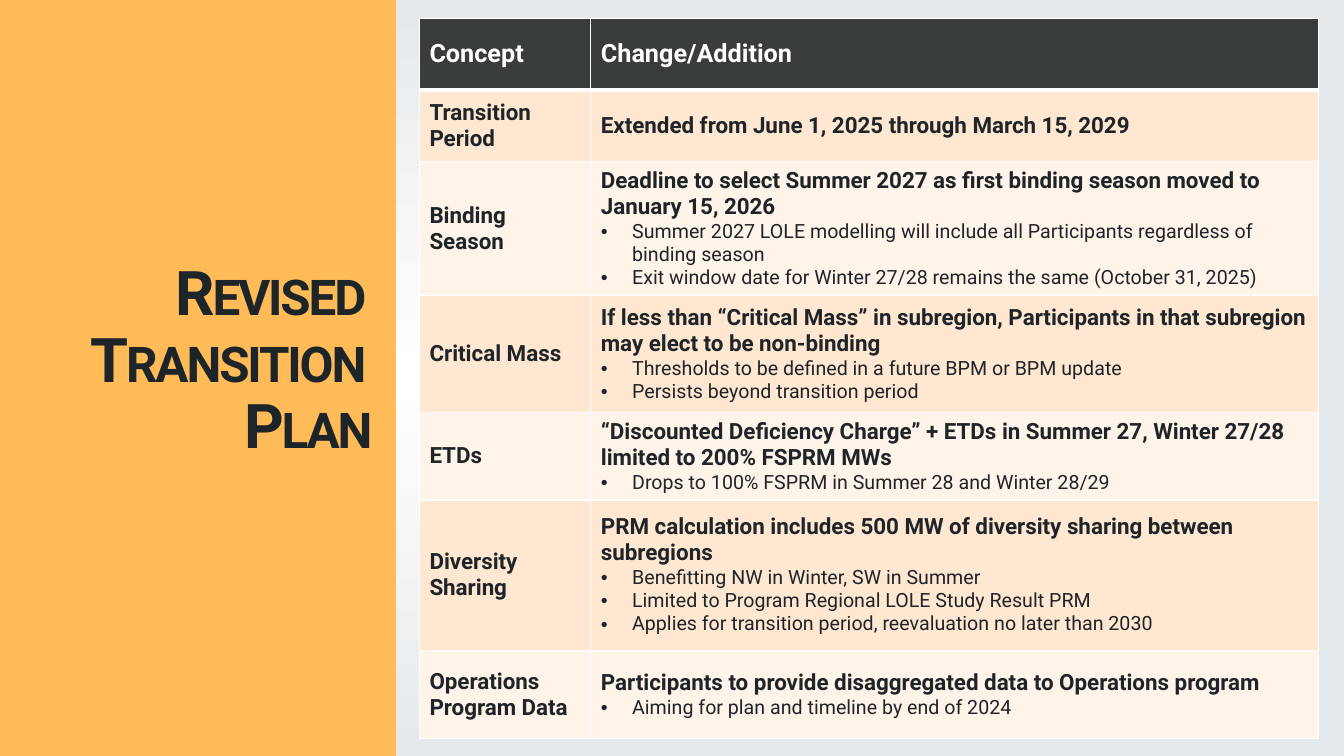
from lxml import etree
from pptx import Presentation
from pptx.dml.color import RGBColor
from pptx.enum.shapes import MSO_SHAPE
from pptx.enum.text import MSO_ANCHOR, PP_ALIGN
from pptx.oxml.ns import qn
from pptx.util import Inches, Pt

RECT = MSO_SHAPE.RECTANGLE
MIDDLE = MSO_ANCHOR.MIDDLE
RIGHT = PP_ALIGN.RIGHT

WHITE = RGBColor(0xFF, 0xFF, 0xFF)
MIST = RGBColor(0xE5, 0xE9, 0xEC)
AMBER = RGBColor(0xFF, 0xBB, 0x58)
INK = RGBColor(0x1D, 0x25, 0x28)
SLATE = RGBColor(0x39, 0x3C, 0x3D)
PEACH = RGBColor(0xFF, 0xE7, 0xD1)
CREAM = RGBColor(0xFF, 0xF3, 0xEA)

TITLE = "Revised Transition Plan"
HEADER = ("Concept", "Change/Addition")
# concept, change, bullets, row height
PLAN = [
    ("Transition Period", "Extended from June 1, 2025 through March 15, 2029", [], 0.71),
    ("Binding Season",
     "Deadline to select Summer 2027 as first binding season moved to January 15, 2026",
     ["Summer 2027 LOLE modelling will include all Participants regardless of binding season",
      "Exit window date for Winter 27/28 remains the same (October 31, 2025)"], 1.3),
    ("Critical Mass",
     "If less than “Critical Mass” in subregion, Participants in that subregion "
     "may elect to be non-binding",
     ["Thresholds to be defined in a future BPM or BPM update",
      "Persists beyond transition period"], 1.16),
    ("ETDs",
     "“Discounted Deficiency Charge” + ETDs in Summer 27, Winter 27/28 limited to 200% FSPRM MWs",
     ["Drops to 100% FSPRM in Summer 28 and Winter 28/29"], 0.85),
    ("Diversity Sharing",
     "PRM calculation includes 500 MW of diversity sharing between subregions",
     ["Benefitting NW in Winter, SW in Summer",
      "Limited to Program Regional LOLE Study Result PRM",
      "Applies for transition period, reevaluation no later than 2030"], 1.49),
    ("Operations Program Data",
     "Participants to provide disaggregated data to Operations program",
     ["Aiming for plan and timeline by end of 2024"], 0.88),
]

WIDE, HIGH = 13.33, 7.5
PANEL = 3.92
COLS = (1.7, 7.22)
HEAD = 0.71
INDENT = Inches(0.31)

FONT = {"name": "Roboto", "bold": True}
BIG = {**FONT, "size": Pt(44)}
TOP = {**FONT, "size": Pt(18)}
LEAD = {**FONT, "size": Pt(16)}
ITEM = {**FONT, "size": Pt(14), "bold": False}


def style(font, form, color):
    for key, value in form.items():
        setattr(font, key, value)
    font.color.rgb = color


def add_bullet(par):
    props = par._p.get_or_add_pPr()
    props.set("marL", str(INDENT))
    props.set("indent", str(-INDENT))
    etree.SubElement(props, qn("a:buFont")).set("typeface", "Arial")
    etree.SubElement(props, qn("a:buChar")).set("char", "•")


def add_border(cell, side, width):
    line = etree.SubElement(cell._tc.get_or_add_tcPr(), qn("a:ln" + side))
    line.set("w", str(Pt(width)))
    fill = etree.SubElement(line, qn("a:solidFill"))
    etree.SubElement(fill, qn("a:srgbClr")).set("val", str(WHITE))


def fill_cell(cell, lead, items, form, color, back, edges):
    """Write a lead line and its bullets, then the borders and the fill."""
    cell.vertical_anchor = MIDDLE
    frame = cell.text_frame
    par = frame.paragraphs[0]
    par.text = lead
    style(par.runs[0].font, form, color)
    for item in items:
        par = frame.add_paragraph()
        add_bullet(par)
        par.text = item
        style(par.runs[0].font, ITEM, color)
    for side, width in edges.items():
        add_border(cell, side, width)
    cell.fill.solid()
    cell.fill.fore_color.rgb = back


def add_back(slide):
    """Fill the background with a gradient from its centre outwards."""
    fill = slide.background.fill
    fill.gradient()
    for stop, color in zip(fill.gradient_stops, (WHITE, MIST)):
        stop.color.rgb = color
    grad = slide.background._cSld.find(".//" + qn("a:gradFill"))
    grad.remove(grad.find(qn("a:lin")))
    path = etree.SubElement(grad, qn("a:path"))
    path.set("path", "shape")
    focus = etree.SubElement(path, qn("a:fillToRect"))
    for side in "ltrb":
        focus.set(side, "50000")


def add_title(slide):
    panel = slide.shapes.add_shape(RECT, 0, 0, Inches(PANEL), Inches(HIGH))
    panel.shadow.inherit = False
    panel.fill.solid()
    panel.fill.fore_color.rgb = panel.line.color.rgb = AMBER
    panel.line.width = Pt(1)

    box = slide.shapes.add_textbox(Inches(0.34), Inches(0.4), Inches(3.37), Inches(6.39))
    frame = box.text_frame
    frame.word_wrap = True
    frame.vertical_anchor = MIDDLE
    par = frame.paragraphs[0]
    par.alignment = RIGHT
    par.line_spacing = 0.9
    run = par.add_run()
    run.text = TITLE
    style(run.font, BIG, INK)
    props = run._r.get_or_add_rPr()
    props.set("cap", "small")
    props.set("spc", "-150")


def add_plan(slide):
    rows = [HEAD] + [row[-1] for row in PLAN]
    table = slide.shapes.add_table(len(rows), len(COLS), Inches(4.16), Inches(0.18),
                                   Inches(sum(COLS)), Inches(sum(rows))).table
    for col, width in zip(table.columns, COLS):
        col.width = Inches(width)
    for row, height in zip(table.rows, rows):
        row.height = Inches(height)

    thin = {"L": 1, "R": 1, "T": 1, "B": 1}
    for col, text in enumerate(HEADER):
        fill_cell(table.cell(0, col), text, [], TOP, WHITE, SLATE, {**thin, "B": 3})
    for num, (concept, change, items, _) in enumerate(PLAN, 1):
        back = PEACH if num % 2 else CREAM
        edges = {**thin, "T": 3 if num == 1 else 1}
        fill_cell(table.cell(num, 0), concept, [], LEAD, INK, back, edges)
        fill_cell(table.cell(num, 1), change, items, LEAD, INK, back, edges)


def main():
    deck = Presentation()
    deck.slide_width, deck.slide_height = Inches(WIDE), Inches(HIGH)
    slide = deck.slides.add_slide(deck.slide_layouts[6])
    add_back(slide)
    add_title(slide)
    add_plan(slide)
    deck.save("out.pptx")


if __name__ == "__main__":
    main()
